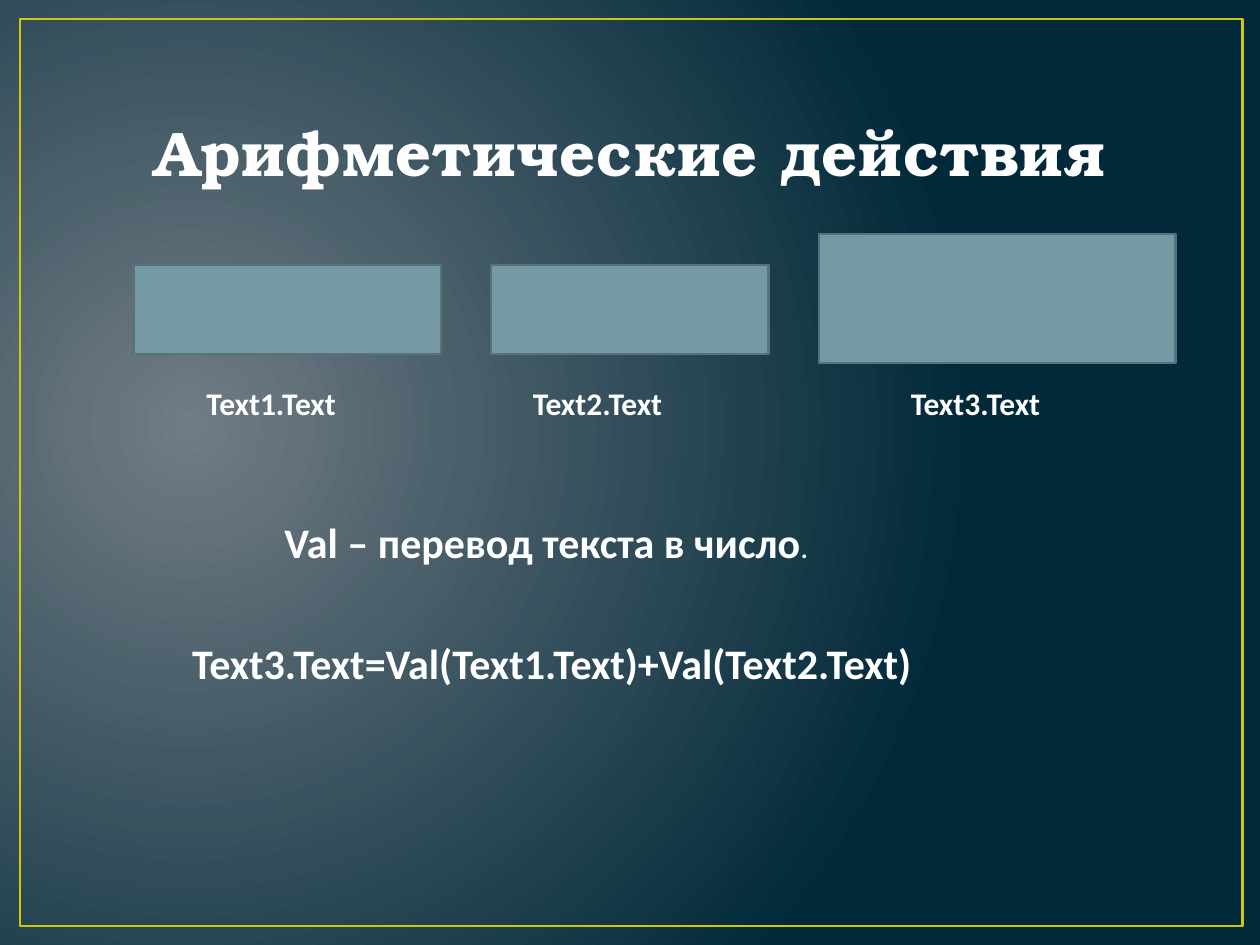
from dataclasses import dataclass

from lxml import etree
from pptx import Presentation
from pptx import util as u
from pptx.dml.color import RGBColor
from pptx.enum import shapes, text
from pptx.oxml import ns


@dataclass(frozen=True)
class Theme:
    glow: str = "717C84"
    night: str = "01293A"
    frame: str = "CFC60D"
    box: str = "759AA5"
    box_line: str = "57727A"
    title: str = "FEFEFE"
    title_outline: str = "384F55"
    body: str = "FFFFFF"
    title_font: str = "TeX Gyre Bonum"
    body_font: str = "Calibri"
    title_size: float = 36
    formula_size: float = 24
    label_size: float = 18


THEME = Theme()


def rgb(value):
    return RGBColor.from_string(value)


def paint_background(s):
    """Radial gradient centred on the left side of the slide."""
    fill = s.background.fill
    fill.gradient()
    for stop, color, position in zip(fill.gradient_stops, (THEME.glow, THEME.night), (0, 1)):
        stop.color.rgb = rgb(color)
        stop.position = position
    grad = s.element.find(".//" + ns.qn("a:gradFill"))
    grad.remove(grad.find(ns.qn("a:lin")))
    path = etree.Element(ns.qn("a:path"), path="circle")
    etree.SubElement(path, ns.qn("a:fillToRect"), l="15000", t="50000", r="85000", b="60000")
    grad.find(ns.qn("a:gsLst")).addnext(path)


def add_box(s, left, top, width, height, line, line_width, fill=None):
    sp = s.shapes.add_shape(shapes.MSO_SHAPE.RECTANGLE,
                            *map(u.Inches, (left, top, width, height)))
    sp.shadow.inherit = False
    if fill:
        sp.fill.solid()
        sp.fill.fore_color.rgb = rgb(fill)
    else:
        sp.fill.background()
    sp.line.color.rgb = rgb(line)
    sp.line.width = u.Pt(line_width)


def add_run(p, content, size, font=THEME.body_font, color=THEME.body):
    r = p.add_run()
    r.text = content
    r.font.size = u.Pt(size)
    r.font.name = font
    r.font.bold = True
    r.font.color.rgb = rgb(color)
    return r


def add_text(s, content, left, top, width, height, *, size, wrap=True,
             align=text.PP_ALIGN.LEFT, anchor=text.MSO_ANCHOR.TOP, **font):
    tf = s.shapes.add_textbox(*map(u.Inches, (left, top, width, height))).text_frame
    tf.word_wrap = wrap
    tf.vertical_anchor = anchor
    p = tf.paragraphs[0]
    p.alignment = align
    add_run(p, content, size, **font)
    return p


def outline_run(r, color, width, spacing):
    props = r.font._element if hasattr(r.font, "_element") else r._r.get_or_add_rPr()
    props.set("spc", str(int(spacing * 100)))
    ln = etree.Element(ns.qn("a:ln"), w=str(u.Pt(width)))
    solid = etree.SubElement(ln, ns.qn("a:solidFill"))
    etree.SubElement(solid, ns.qn("a:srgbClr"), val=color)
    props.insert(0, ln)


def add_title(s):
    p = add_text(s, "Арифметические действия", 0.5, 0.3, 9, 1.25,
                 size=THEME.title_size, font=THEME.title_font, color=THEME.title,
                 align=text.PP_ALIGN.CENTER, anchor=text.MSO_ANCHOR.BOTTOM)
    outline_run(p.runs[0], THEME.title_outline, 1.05, 0.5)


def add_field(s, name, box, label_left):
    """Text field with its name below."""
    add_box(s, *box, THEME.box_line, 1.25, THEME.box)
    add_text(s, name, label_left, 3, 1.25, 0.4, size=THEME.label_size, wrap=False)


def main():
    prs = Presentation()
    prs.slide_width, prs.slide_height = u.Inches(10), u.Inches(7.5)
    s = prs.slides.add_slide(prs.slide_layouts[6])

    paint_background(s)
    add_box(s, 0.16, 0.15, 9.7, 7.2, THEME.frame, 1.5)
    add_title(s)

    fields = [
        ("Text1.Text", (1.06, 2.1, 2.44, 0.71), 1.54),
        ("Text2.Text", (3.9, 2.1, 2.2, 0.71), 4.13),
        ("Text3.Text", (6.5, 1.86, 2.83, 1.02), 7.13),
    ]
    for name, box, label_left in fields:
        add_field(s, name, box, label_left)

    note = add_text(s, "Val – перевод текста в число", 2.16, 4.05, 4.76, 0.5,
                    size=THEME.formula_size)
    add_run(note, ".", THEME.label_size).font.bold = False
    add_text(s, "Text3.Text=Val(Text1.Text)+Val(Text2.Text)", 1.06, 5.01, 6.64, 0.5,
             size=THEME.formula_size, align=text.PP_ALIGN.CENTER)

    prs.save("out.pptx")


if __name__ == "__main__":
    main()
